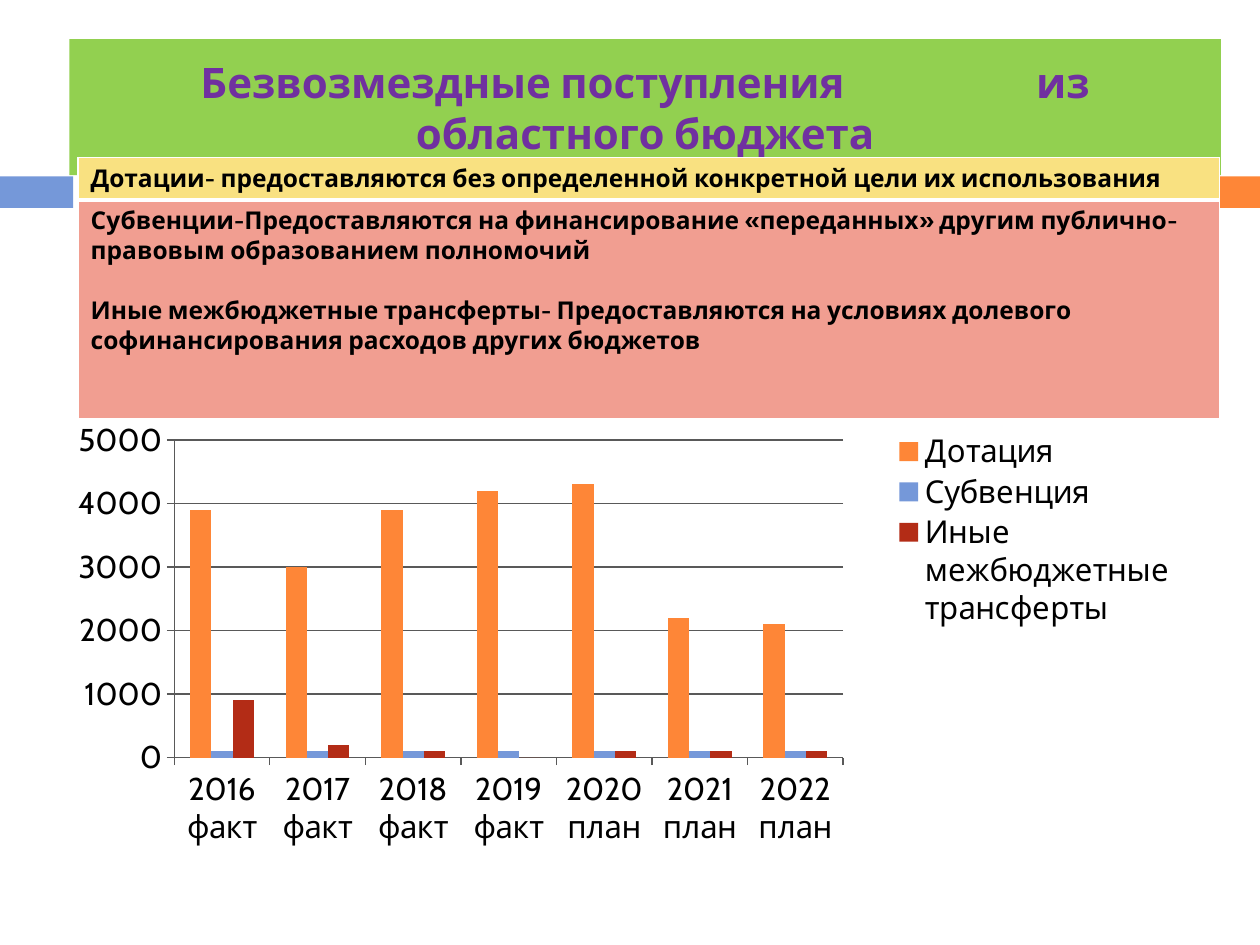
from dataclasses import dataclass

from lxml.etree import SubElement
from pptx import Presentation
from pptx.chart.data import CategoryChartData
from pptx.dml.color import RGBColor
from pptx.enum.chart import XL_CHART_TYPE, XL_LEGEND_POSITION, XL_TICK_MARK
from pptx.enum.shapes import MSO_SHAPE
from pptx.enum.text import MSO_ANCHOR, MSO_AUTO_SIZE, PP_ALIGN
from pptx.oxml import parse_xml
from pptx.oxml.ns import nsdecls, qn
from pptx.slide import Slide
from pptx.util import Inches, Pt

ORANGE, BLUE, RED = "FE8637", "7598D9", "B32C16"
GREEN, PURPLE = "92D050", "7030A0"
YELLOW, PINK = "F9E181", "F19E91"
BLACK, WHITE, GRAY = "000000", "FFFFFF", "595959"


def color(value):
    return RGBColor.from_string(value)


def paint(fill, value):
    fill.solid()
    fill.fore_color.rgb = color(value)


def place(shape, left, top, width, height):
    shape.left, shape.top = Inches(left), Inches(top)
    shape.width, shape.height = Inches(width), Inches(height)


def set_layout(element, left, top, width, height, inner=False):
    target = '<c:layoutTarget val="inner"/>' if inner else ""
    layout = parse_xml(
        f"<c:layout {nsdecls('c')}><c:manualLayout>{target}"
        '<c:xMode val="edge"/><c:yMode val="edge"/>'
        f'<c:x val="{left}"/><c:y val="{top}"/>'
        f'<c:w val="{width}"/><c:h val="{height}"/>'
        "</c:manualLayout></c:layout>"
    )
    for existing in element.findall(qn("c:layout")):
        element.remove(existing)
    if inner:
        element.insert(0, layout)
    else:
        element.find(qn("c:legendPos")).addnext(layout)


@dataclass
class SlideBuilder:
    slide: Slide
    font: str = "Cabin"

    def style(self, font, size, value, bold=False):
        font.name = self.font
        font.size = Pt(size)
        font.bold = bold
        font.color.rgb = color(value)

    def bar(self, left, width, value):
        box = self.slide.shapes.add_shape(
            MSO_SHAPE.RECTANGLE, Inches(left), Inches(1.4), Inches(width), Inches(0.25)
        )
        paint(box.fill, value)
        box.line.fill.background()
        box.shadow.inherit = False

    def title(self, before, after, gap):
        title = self.slide.shapes.title
        place(title, 0.55, 0.31, 9.14, 1.08)
        paint(title.fill, GREEN)
        frame = title.text_frame
        frame.auto_size = MSO_AUTO_SIZE.NONE
        frame.word_wrap = True
        frame.vertical_anchor = MSO_ANCHOR.MIDDLE
        para = frame.paragraphs[0]
        para.alignment = PP_ALIGN.CENTER
        for text in (before, " ", after):
            span = para.add_run()
            span.text = text
            self.style(span.font, 24, PURPLE, True)
        para.runs[1].font._element.set("spc", str(gap * 100))

    def chart(self, categories, series):
        data = CategoryChartData()
        data.categories = categories
        for name, values, _ in series:
            data.add_series(name, values)
        chart = self.slide.shapes.add_chart(
            XL_CHART_TYPE.COLUMN_CLUSTERED,
            Inches(0.62), Inches(3.05), Inches(8.96), Inches(4.06), data,
        ).chart
        self.style(chart.font, 18, BLACK)
        chart.has_title = False
        plot = chart.plots[0]
        plot.gap_width = 150
        plot.vary_by_categories = False
        for item, (_, _, value) in zip(plot.series, series):
            paint(item.format.fill, value)
        for axis in (chart.category_axis, chart.value_axis):
            axis.major_tick_mark = XL_TICK_MARK.OUTSIDE
            axis.format.line.color.rgb = color(GRAY)
        chart.value_axis.minimum_scale = 0
        chart.value_axis.maximum_scale = 5000
        chart.value_axis.major_unit = 1000
        chart.value_axis.has_major_gridlines = True
        chart.value_axis.major_gridlines.format.line.color.rgb = color(GRAY)
        chart.has_legend = True
        chart.legend.position = XL_LEGEND_POSITION.RIGHT
        chart.legend.include_in_layout = False
        set_layout(chart._chartSpace.chart.plotArea, 0.072, 0.109, 0.601, 0.621, inner=True)
        set_layout(chart.legend._element, 0.71, 0.09, 0.27, 0.39)

    def table(self, rows):
        table = self.slide.shapes.add_table(
            len(rows), 1, Inches(0.62), Inches(1.25), Inches(9.06), Inches(2.07)
        ).table
        table.first_row = False
        table.horz_banding = False
        for index, (height, value, bottom, texts) in enumerate(rows):
            table.rows[index].height = Inches(height)
            cell = table.cell(index, 0)
            self.borders(cell, bottom if index == 0 else 1, bottom)
            paint(cell.fill, value)
            cell.text_frame.text = "\n".join(texts)
            for position, para in enumerate(cell.text_frame.paragraphs):
                if position:
                    para.space_before = Pt(17)
                self.style(para.runs[0].font, 14, BLACK, True)

    def borders(self, cell, top, bottom):
        properties = cell._tc.get_or_add_tcPr()
        widths = {"lnL": 1, "lnR": 1, "lnT": 1 if top == bottom else top, "lnB": bottom}
        for side, width in widths.items():
            line = SubElement(properties, qn(f"a:{side}"), w=str(Pt(width)))
            fill = SubElement(line, qn("a:solidFill"))
            SubElement(fill, qn("a:srgbClr"), val=WHITE)


def main():
    deck = Presentation()
    deck.slide_width, deck.slide_height = Inches(10), Inches(7.5)
    page = SlideBuilder(deck.slides.add_slide(deck.slide_layouts[5]))
    page.bar(0, 0.58, BLUE)
    page.bar(0.65, 9.35, ORANGE)
    page.title("Безвозмездные поступления", "из областного бюджета", 104)
    page.chart(
        [f"{year} {'факт' if year < 2020 else 'план'}" for year in range(2016, 2023)],
        [
            ("Дотация", (3900, 3000, 3900, 4200, 4300, 2200, 2100), ORANGE),
            ("Субвенция", (100,) * 7, BLUE),
            ("Иные межбюджетные трансферты", (900, 200, 100, 0, 100, 100, 100), RED),
        ],
    )
    page.table([
        (0.33, YELLOW, 3, [
            "Дотации- предоставляются без определенной конкретной цели их использования",
        ]),
        (1.74, PINK, 1, [
            "Субвенции-Предоставляются на финансирование «переданных» другим "
            "публично-правовым образованием полномочий",
            "Иные межбюджетные трансферты- Предоставляются на условиях долевого "
            "софинансирования расходов других бюджетов",
        ]),
    ])
    deck.save("out.pptx")


if __name__ == "__main__":
    main()
